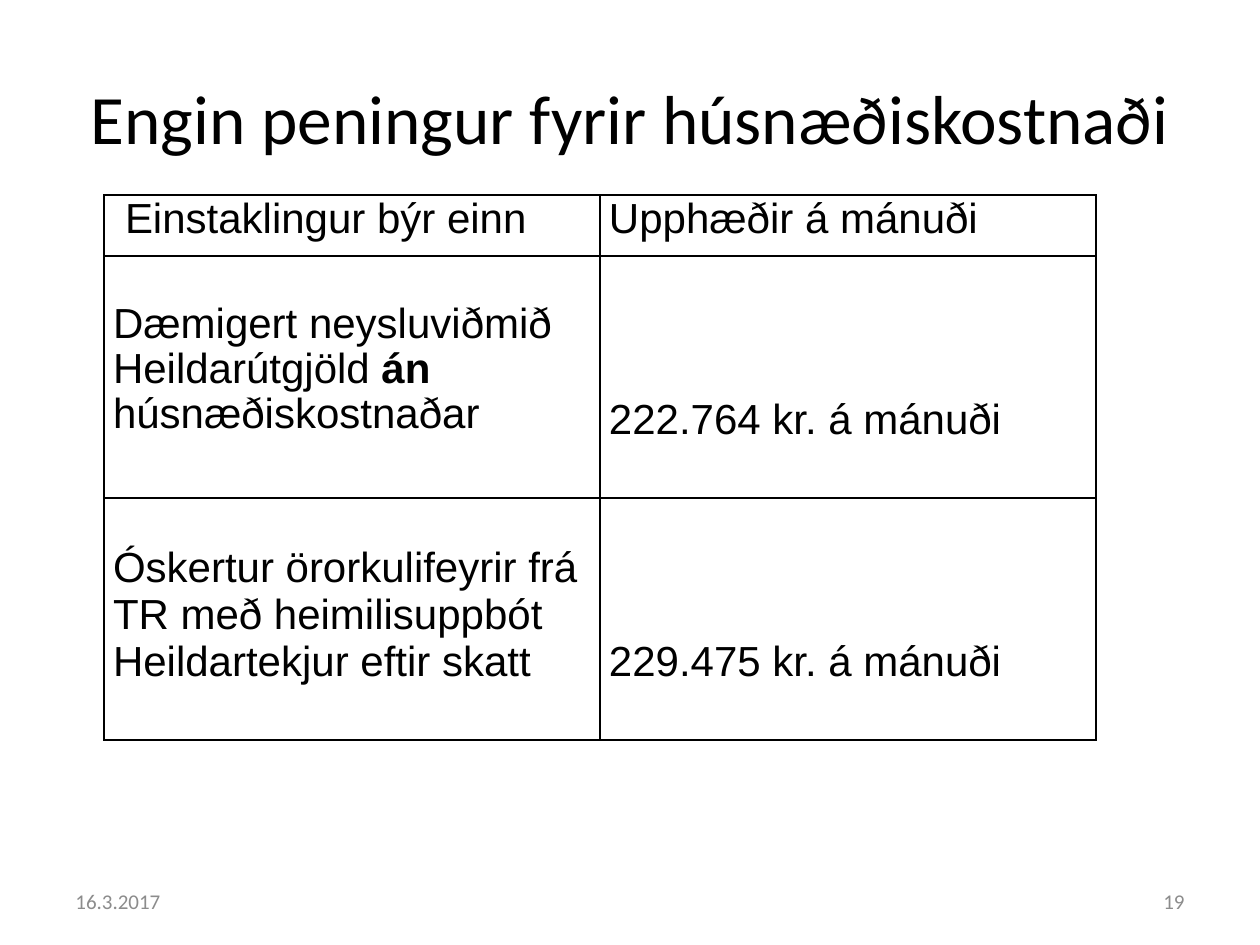
import dataclasses
import pptx
import pptx.dml.color
import pptx.enum.text
import pptx.oxml
import pptx.oxml.ns
import pptx.util

EMU = 914400 / 126  # one px
ALIGN = pptx.enum.text.PP_ALIGN
MIDDLE = pptx.enum.text.MSO_ANCHOR.MIDDLE


@dataclasses.dataclass(frozen=True)
class Theme:
    ink: str = "000000"
    gray: str = "8C8C8C"
    head: str = "Calibri"
    body: str = "Arial"
    title: float = 39.6
    cell: float = 24
    foot: float = 12
    rule: float = 1


@dataclasses.dataclass(frozen=True)
class Run:
    text: str
    bold: bool = False


@dataclasses.dataclass(frozen=True)
class Cell:
    paras: list[list[Run]]
    top: int = 0
    left: int = 9
    lead: float = 1.0


@dataclasses.dataclass(frozen=True)
class Foot:
    text: str
    left: int
    align: ALIGN


THEME = Theme()
LINE = 47  # height of one line of cell text
COLS = [496, 496]
ROWS = [61, 242, 242]

CELLS = [
    [Cell([[Run("Einstaklingur býr einn")]], left=21),
     Cell([[Run("Upphæðir á mánuði")]])],
    [Cell([[Run("Dæmigert neysluviðmið")],
           [Run("Heildarútgjöld "), Run("án", True), Run(" húsnæðiskostnaðar")]],
          top=LINE, lead=0.96),
     Cell([[Run("222.764 kr. á mánuði")]], top=3 * LINE)],
    [Cell([[Run("Óskertur örorkulifeyrir frá TR með heimilisuppbót")],
           [Run("Heildartekjur eftir skatt")]], top=LINE),
     Cell([[Run("229.475 kr. á mánuði")]], top=3 * LINE)],
]

FEET = [Foot("16.3.2017", 63, ALIGN.LEFT), Foot("19", 903, ALIGN.RIGHT)]


def px(size: int) -> int:
    return round(size * EMU)


def write(para, run: Run, font: str, size: float, color: str) -> None:
    part = para.add_run()
    part.text = run.text
    part.font.name = font
    part.font.size = pptx.util.Pt(size)
    part.font.bold = run.bold
    part.font.color.rgb = pptx.dml.color.RGBColor.from_string(color)


def border(cell) -> None:
    props = cell._tc.get_or_add_tcPr()
    width = pptx.util.Pt(THEME.rule)
    for spot, side in enumerate(("lnL", "lnR", "lnT", "lnB")):
        props.insert(spot, pptx.oxml.parse_xml(
            f'<a:{side} {pptx.oxml.ns.nsdecls("a")} w="{width}"><a:solidFill>'
            f'<a:srgbClr val="{THEME.ink}"/></a:solidFill></a:{side}>'))


def fill(cell, data: Cell) -> None:
    cell.fill.background()
    border(cell)
    cell.margin_left, cell.margin_right = px(data.left), px(9)
    cell.margin_top, cell.margin_bottom = px(data.top), 0
    frame = cell.text_frame
    for spot, runs in enumerate(data.paras):
        para = frame.add_paragraph() if spot else frame.paragraphs[0]
        para.line_spacing = data.lead
        for run in runs:
            write(para, run, THEME.body, THEME.cell, THEME.ink)


def grid(slide) -> None:
    table = slide.shapes.add_table(
        len(ROWS), len(COLS), px(104), px(195),
        px(sum(COLS)), px(sum(ROWS))).table
    table.first_row = table.horz_banding = False
    for col, width in zip(table.columns, COLS):
        col.width = px(width)
    for row, height, line in zip(table.rows, ROWS, CELLS):
        row.height = px(height)
        for cell, data in zip(row.cells, line):
            fill(cell, data)


def foot(slide, data: Foot) -> None:
    box = slide.shapes.add_textbox(px(data.left), px(876), px(294), px(50))
    frame = box.text_frame
    frame.word_wrap = True
    frame.vertical_anchor = MIDDLE
    para = frame.paragraphs[0]
    para.alignment = data.align
    write(para, Run(data.text), THEME.head, THEME.foot, THEME.gray)


def main() -> None:
    deck = pptx.Presentation()
    deck.slide_width, deck.slide_height = px(1260), px(945)
    slide = deck.slides.add_slide(deck.slide_layouts[5])

    # Title
    title = slide.shapes.title
    title.left, title.top = px(63), px(38)
    title.width, title.height = px(1134), px(158)
    frame = title.text_frame
    frame.vertical_anchor = MIDDLE
    frame.auto_size = pptx.enum.text.MSO_AUTO_SIZE.NONE
    para = frame.paragraphs[0]
    para.alignment = ALIGN.CENTER
    write(para, Run("Engin peningur fyrir húsnæðiskostnaði"),
          THEME.head, THEME.title, THEME.ink)

    # Table of amounts
    grid(slide)

    # Date and page number
    for data in FEET:
        foot(slide, data)

    deck.save("out.pptx")


if __name__ == "__main__":
    main()
